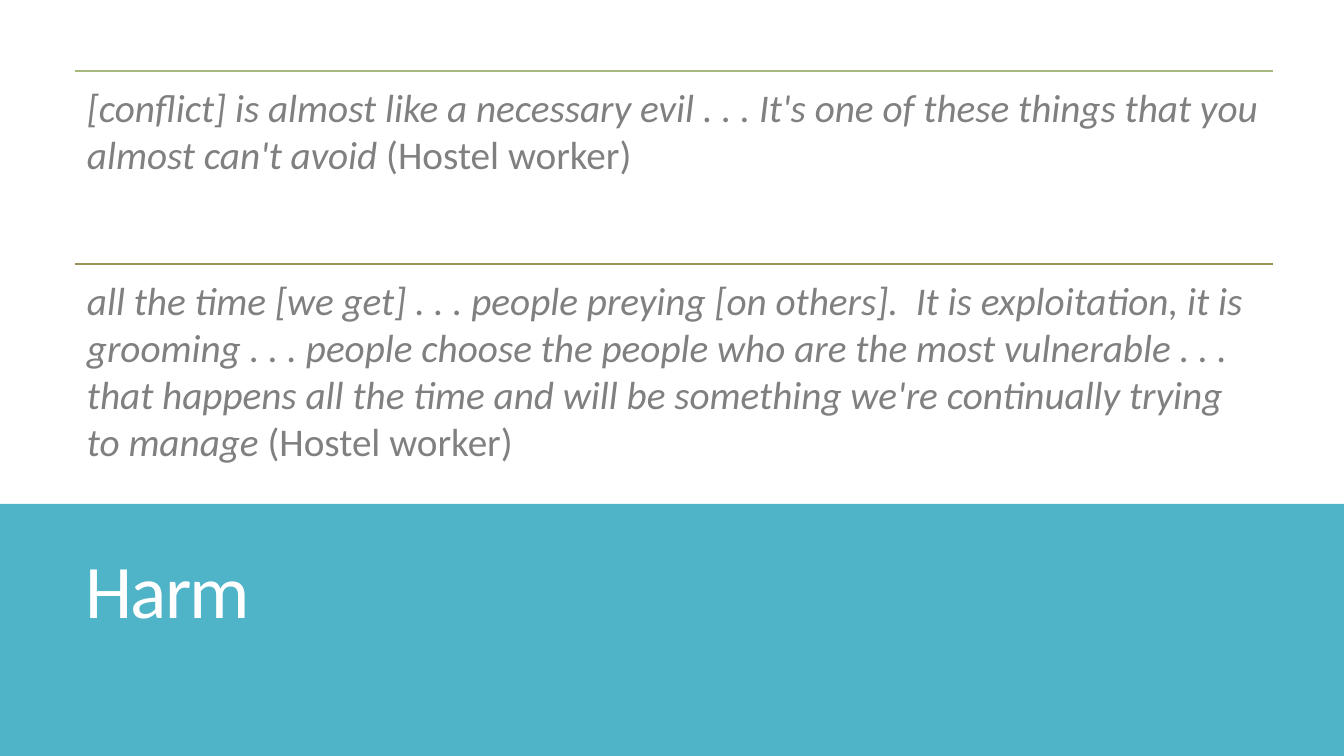
from dataclasses import dataclass

from pptx import Presentation
from pptx import util as u
from pptx.dml.color import RGBColor
from pptx.enum import shapes, text
from pptx.oxml.ns import qn
from lxml import etree

PX = 914400 / 100.8


def px(length):
    """Turn px into EMU."""
    return u.Emu(round(length * PX))


@dataclass(frozen=True)
class Theme:
    """Fonts, colours and type sizes."""
    font: str = "Calibri"
    band: str = "50B4C8"
    title: str = "FFFFFF"
    quote: str = "808080"
    rules: tuple = ("A8B97F", "9B9256")
    title_size: int = 54
    quote_size: int = 28


class SlideBuilder:
    """Adds styled elements to one slide."""

    def __init__(self, slide, theme):
        self.slide = slide
        self.theme = theme

    def run(self, paragraph, words, size, color, italic=False):
        """Add one formatted run."""
        run = paragraph.add_run()
        run.text = words
        run.font.name = self.theme.font
        run.font.size = u.Pt(size)
        run.font.italic = italic
        run.font.color.rgb = RGBColor.from_string(color)
        return run

    def band(self, left, top, width, height):
        """Add the filled band."""
        shape = self.slide.shapes.add_shape(
            shapes.MSO_SHAPE.RECTANGLE, *map(px, (left, top, width, height)))
        shape.shadow.inherit = False
        shape.fill.solid()
        shape.fill.fore_color.rgb = RGBColor.from_string(self.theme.band)
        shape.line.fill.background()

    def title(self, words, left, top, width, height):
        """Place the title in front of the band."""
        title = self.slide.shapes.title
        title._element.getparent().append(title._element)
        title.left, title.top, title.width, title.height = map(
            px, (left, top, width, height))
        frame = title.text_frame
        frame.vertical_anchor = text.MSO_ANCHOR.MIDDLE
        paragraph = frame.paragraphs[0]
        paragraph.alignment = text.PP_ALIGN.LEFT
        paragraph.line_spacing = 0.85
        run = self.run(paragraph, words, self.theme.title_size, self.theme.title)
        run._r.get_or_add_rPr().set("spc", "-120")

    def rule(self, left, top, width, color):
        """Add a thin horizontal line."""
        line = self.slide.shapes.add_connector(
            shapes.MSO_CONNECTOR.STRAIGHT,
            px(left), px(top), px(left + width), px(top))
        line.line.color.rgb = RGBColor.from_string(color)
        line.line.width = u.Pt(1)
        etree.SubElement(line._element.spPr, qn("a:effectLst"))

    def quote(self, words, speaker, left, top, width, height):
        """Add an italic quotation with its upright speaker."""
        box = self.slide.shapes.add_textbox(*map(px, (left, top, width, height)))
        frame = box.text_frame
        frame.word_wrap = True
        frame.margin_left = frame.margin_right = px(12)
        frame.margin_top = frame.margin_bottom = px(12)
        paragraph = frame.paragraphs[0]
        size, color = self.theme.quote_size, self.theme.quote
        self.run(paragraph, words, size, color, italic=True)
        self.run(paragraph, speaker, size, color)


QUOTES = (
    "[conflict] is almost like a necessary evil . . . It's one of these things "
    "that you almost can't avoid ",
    "all the time [we get] . . . people preying [on others].  It is exploitation, "
    "it is grooming . . . people choose the people who are the most vulnerable "
    ". . . that happens all the time and will be something we're continually "
    "trying to manage ",
)


def main():
    """Build and save the slide."""
    presentation = Presentation()
    presentation.slide_width, presentation.slide_height = px(1344), px(756)
    slide = presentation.slides.add_slide(presentation.slide_layouts[5])
    theme = Theme()
    builder = SlideBuilder(slide, theme)
    builder.band(0, 504, 1344, 252)
    builder.title("Harm", 75, 504, 1187, 182)
    left, first_top, width, pitch = 75, 71, 1198, 193
    for index, (words, color) in enumerate(zip(QUOTES, theme.rules)):
        top = first_top + index * pitch
        builder.rule(left, top, width, color)
        builder.quote(words, "(Hostel worker)", left, top, width, pitch)
    presentation.save("out.pptx")


if __name__ == "__main__":
    main()
